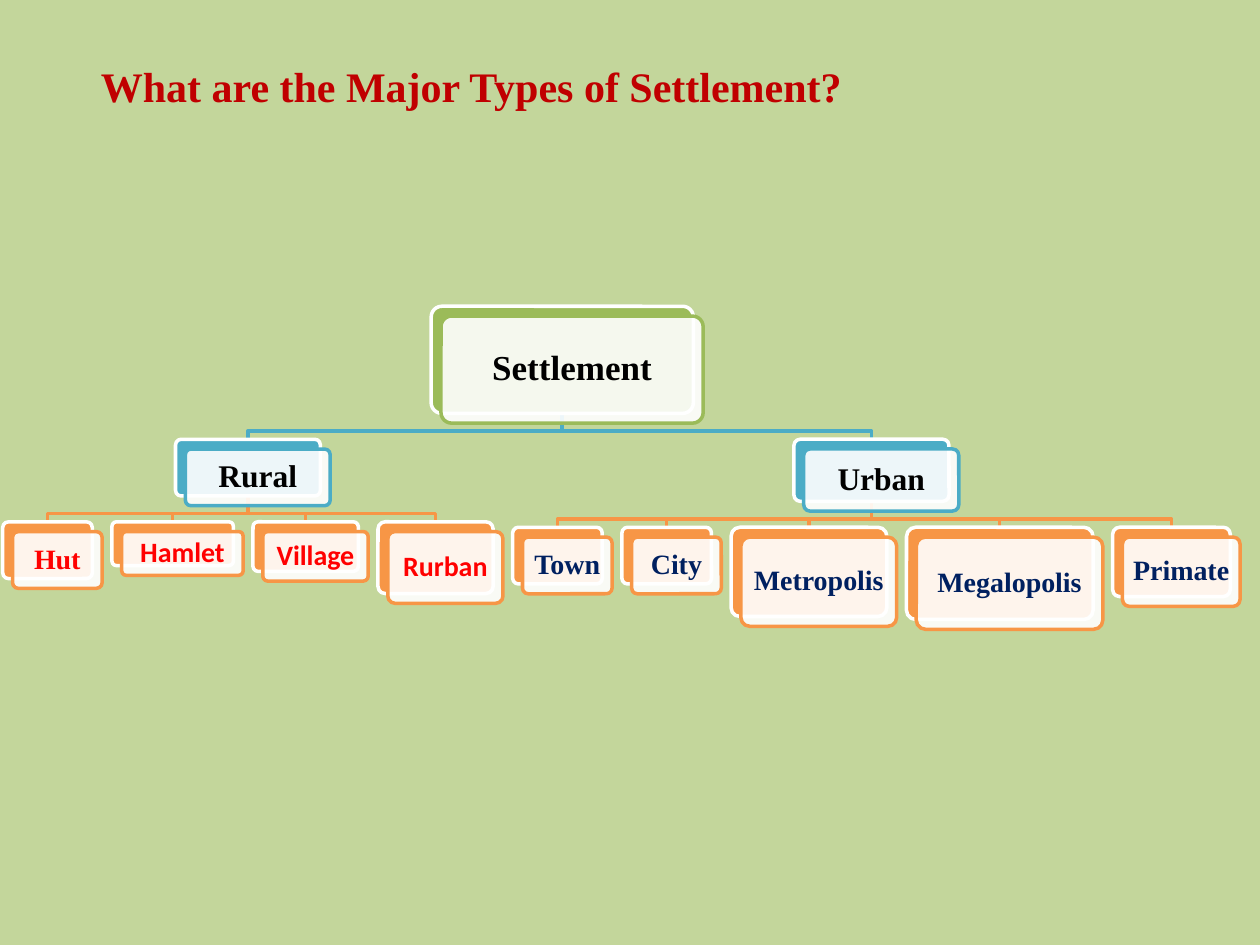
"""Build a slide showing the types of settlement as a tree of layered cards."""
from dataclasses import dataclass, field

from lxml import etree
from pptx import Presentation
from pptx import util as u
from pptx.dml import color
from pptx.enum import shapes, text
from pptx.oxml import ns
from pptx.shapes import autoshape as auto
from pptx.text import text as txt

SERIF, SANS = "Times New Roman", "Calibri"
BLACK, WHITE, RED, NAVY = "000000", "FFFFFF", "FF0000", "002060"
GREEN, TEAL, ORANGE = "9BBB59", "4BACC6", "F79646"
SIBLING_GAP, LEVEL_GAP, ELBOW_DROP = 11.2, 14.8, 10
LAYER_OFFSET, LINE_WIDTH, INSET = 5.6, 2, 5


@dataclass
class Card:
    label: str
    width: float
    height: float
    accent: str = ORANGE
    ink: str = BLACK
    size: float = 16
    font: str = SERIF
    children: list["Card"] = field(default_factory=list)
    left: float = 0
    top: float = 0

    @property
    def center(self) -> float:
        return self.left + self.width / 2

    @property
    def bottom(self) -> float:
        return self.top + self.height


def rgb(value: str) -> color.RGBColor:
    return color.RGBColor.from_string(value)


def add_run(paragraph: txt._Paragraph, words: str, font: str, size: float, ink: str) -> None:
    run = paragraph.add_run()
    run.text = words
    run.font.name, run.font.size, run.font.bold = font, u.Pt(size), True
    run.font.color.rgb = rgb(ink)


def arrange(card: Card, left: float, top: float) -> float:
    """Place a card centred above its children and return its branch's right edge."""
    card.top = top
    if not card.children:
        card.left = left
        return left + card.width
    right = left - SIBLING_GAP
    for child in card.children:
        right = arrange(child, right + SIBLING_GAP, card.bottom + LEVEL_GAP)
    first, last = card.children[0], card.children[-1]
    card.left = (first.left + last.left + last.width - card.width) / 2
    return right


def set_line(shape: auto.Shape, ink: str) -> None:
    shape.shadow.inherit = False
    shape.line.color.rgb = rgb(ink)
    shape.line.width = u.Pt(LINE_WIDTH)


def draw_branches(slide, parent: Card) -> None:
    for child in parent.children:
        draw_branches(slide, child)
        elbow = parent.bottom + ELBOW_DROP
        points = [(parent.center, elbow), (child.center, elbow), (child.center, child.top)]
        builder = slide.shapes.build_freeform(u.Pt(parent.center), u.Pt(parent.bottom))
        builder.add_line_segments([(u.Pt(x), u.Pt(y)) for x, y in points], close=False)
        branch = builder.convert_to_shape()
        branch.fill.background()
        set_line(branch, child.accent)


def add_layer(slide, card: Card, offset: float, fill: str, line: str) -> auto.Shape:
    layer = slide.shapes.add_shape(
        shapes.MSO_SHAPE.ROUNDED_RECTANGLE, u.Pt(card.left + offset), u.Pt(card.top + offset),
        u.Pt(card.width), u.Pt(card.height))
    layer.adjustments[0] = 0.1
    layer.fill.solid()
    layer.fill.fore_color.rgb = rgb(fill)
    set_line(layer, line)
    return layer


def draw_cards(slide, card: Card) -> None:
    add_layer(slide, card, 0, card.accent, WHITE)
    front = add_layer(slide, card, LAYER_OFFSET, WHITE, card.accent)
    fill_color = front.element.spPr.find(ns.qn("a:solidFill")).find(ns.qn("a:srgbClr"))
    etree.SubElement(fill_color, ns.qn("a:alpha"), val="90000")
    frame = front.text_frame
    frame.word_wrap = False
    frame.vertical_anchor = text.MSO_ANCHOR.MIDDLE
    frame.margin_left = frame.margin_right = u.Pt(INSET)
    frame.margin_top = frame.margin_bottom = u.Pt(INSET)
    label = frame.paragraphs[0]
    label.alignment = text.PP_ALIGN.CENTER
    label.line_spacing = 0.9
    add_run(label, card.label, card.font, card.size, card.ink)
    for child in card.children:
        draw_cards(slide, child)


def add_title(slide, words: str) -> None:
    title = slide.shapes.title
    title.left, title.top, title.width, title.height = map(u.Pt, (50.4, 31, 455.8, 36.4))
    frame = title.text_frame
    frame.word_wrap = True
    frame.auto_size = text.MSO_AUTO_SIZE.SHAPE_TO_FIT_TEXT
    frame.vertical_anchor = text.MSO_ANCHOR.TOP
    heading = frame.paragraphs[0]
    heading.alignment = text.PP_ALIGN.LEFT
    add_run(heading, words, SERIF, 24, "C00000")


def main() -> None:
    deck = Presentation()
    deck.slide_width, deck.slide_height = u.Pt(720), u.Pt(540)
    slide = deck.slides.add_slide(deck.slide_layouts[5])
    slide.background.fill.solid()
    slide.background.fill.fore_color.rgb = rgb("C3D69B")
    add_title(slide, "What are the Major Types of Settlement?")

    rural = Card("Rural", 82.8, 32.4, TEAL, size=18, children=[
        Card("Hut", 51.2, 32.4, ink=RED),
        Card("Hamlet", 69.4, 25, ink=RED, font=SANS),
        Card("Village", 60.2, 28.3, ink=RED, font=SANS),
        Card("Rurban", 65.8, 41, ink=RED, font=SANS),
    ])
    urban = Card("Urban", 88.6, 35.5, TEAL, size=18, children=[
        Card("Town", 51.2, 32.4, ink=NAVY),
        Card("City", 51.2, 32.4, ink=NAVY),
        Card("Metropolis", 89, 51, ink=NAVY),
        Card("Megalopolis", 106.6, 52.7, ink=NAVY),
        Card("Primate", 67.2, 39.6, ink=NAVY),
    ])
    settlement = Card("Settlement", 149.8, 61.2, GREEN, size=20, children=[rural, urban])
    arrange(settlement, 1.6, 175)
    draw_branches(slide, settlement)
    draw_cards(slide, settlement)
    deck.save("out.pptx")


if __name__ == "__main__":
    main()
